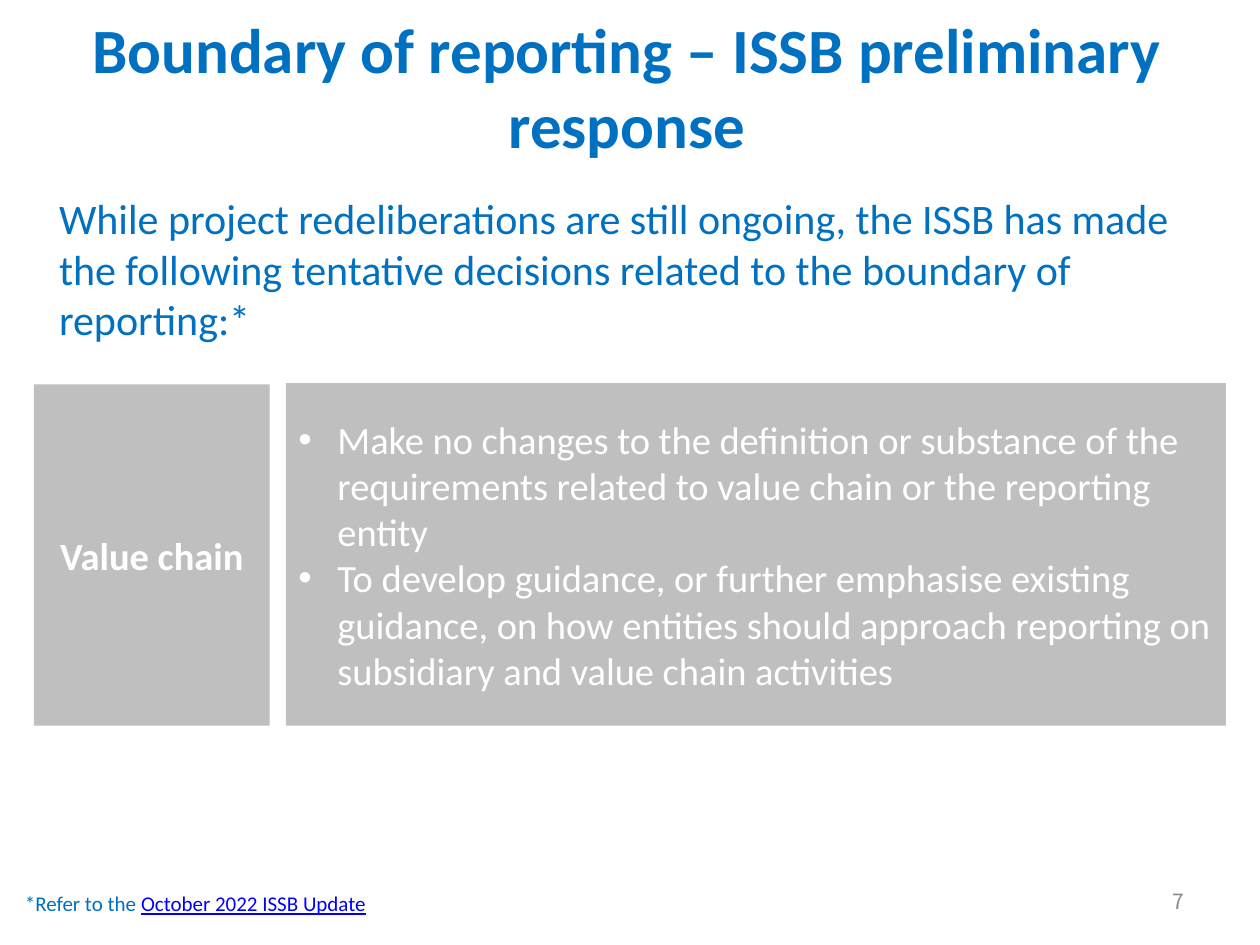
"""Build the slide on the boundary of reporting."""
from lxml import etree
from pptx import Presentation
from pptx.dml.color import RGBColor
from pptx.enum.shapes import MSO_SHAPE
from pptx.enum.text import MSO_ANCHOR, MSO_AUTO_SIZE, PP_ALIGN
from pptx.oxml.ns import qn
from pptx.util import Inches, Pt

BLUE = RGBColor(0x00, 0x70, 0xC0)
LINK_BLUE = RGBColor(0x00, 0x00, 0xFF)
GREY = RGBColor(0xBF, 0xBF, 0xBF)
NUMBER_GREY = RGBColor(0x89, 0x89, 0x89)
WHITE = RGBColor(0xFF, 0xFF, 0xFF)
RECTANGLE = MSO_SHAPE.RECTANGLE
TOP, MIDDLE = MSO_ANCHOR.TOP, MSO_ANCHOR.MIDDLE
LEFT, CENTER, RIGHT = PP_ALIGN.LEFT, PP_ALIGN.CENTER, PP_ALIGN.RIGHT
NO_AUTOFIT = MSO_AUTO_SIZE.NONE
TITLE_ONLY = 5

WIDTH, HEIGHT = 10, 7.5
MARGIN = 0.27
TEXT_LEFT = 0.1
PANEL_BOTTOM = 5.76
TOPIC = "Value chain"
DECISIONS = (
    "Make no changes to the definition or substance of the requirements "
    "related to value chain or the reporting entity",
    "To develop guidance, or further emphasise existing guidance, on how "
    "entities should approach reporting on subsidiary and value chain activities",
)


def add_run(paragraph, text, size, color, bold=False, underline=False, font="Calibri"):
    """Append one formatted run to a paragraph."""
    run = paragraph.add_run()
    run.text = text
    run.font.name = font
    run.font.size = Pt(size)
    run.font.bold = bold
    run.font.underline = underline
    run.font.color.rgb = color


def prepare_text(shape, anchor=TOP, align=LEFT):
    """Set wrapping, anchor and alignment, and return the first paragraph."""
    frame = shape.text_frame
    frame.word_wrap = True
    frame.auto_size = NO_AUTOFIT
    frame.vertical_anchor = anchor
    paragraph = frame.paragraphs[0]
    paragraph.alignment = align
    return paragraph


def set_indent(paragraph, left, first=0, bullet=None):
    """Indent a paragraph in inches and optionally give it a bullet."""
    properties = paragraph._p.get_or_add_pPr()
    properties.set("marL", str(Inches(left)))
    properties.set("indent", str(Inches(first)))
    if bullet:
        etree.SubElement(properties, qn("a:buFont")).set("typeface", "Arial")
        etree.SubElement(properties, qn("a:buChar")).set("char", bullet)


def add_title(slide, text):
    """Place and format the title placeholder."""
    title = slide.shapes.title
    title.left, title.top = Inches(TEXT_LEFT), Inches(0.33)
    title.width, title.height = Inches(9.75), Inches(0.7)
    add_run(prepare_text(title, MIDDLE, CENTER), text, 36, BLUE, bold=True)


def add_text(slide, left, top, width, height, anchor=TOP, align=LEFT):
    """Add a text box and return its first paragraph."""
    box = slide.shapes.add_textbox(*map(Inches, (left, top, width, height)))
    return prepare_text(box, anchor, align)


def add_panel(slide, left, top, width, align):
    """Add a grey panel down to the shared bottom edge."""
    bounds = (left, top, width, PANEL_BOTTOM - top)
    panel = slide.shapes.add_shape(RECTANGLE, *map(Inches, bounds))
    panel.shadow.inherit = False
    panel.fill.solid()
    panel.fill.fore_color.rgb = GREY
    panel.line.fill.background()
    prepare_text(panel, MIDDLE, align)
    return panel.text_frame


def add_decisions(frame):
    """Fill a panel with the bulleted decisions."""
    for index, decision in enumerate(DECISIONS):
        paragraph = frame.add_paragraph() if index else frame.paragraphs[0]
        paragraph.alignment = LEFT
        set_indent(paragraph, 0.31, -0.31, "•")
        add_run(paragraph, decision, 22, WHITE)


def main():
    """Assemble and save the slide."""
    presentation = Presentation()
    presentation.slide_width, presentation.slide_height = Inches(WIDTH), Inches(HEIGHT)
    slide = presentation.slides.add_slide(presentation.slide_layouts[TITLE_ONLY])
    add_title(slide, "Boundary of reporting – ISSB preliminary response")

    introduction = add_text(slide, MARGIN, 1.48, 9.32, 1.4)
    introduction.space_before, introduction.space_after = Pt(12), Pt(6)
    set_indent(introduction, 0.1)
    add_run(introduction, "While project redeliberations are still ongoing, the ISSB "
            "has made the following tentative decisions related to the boundary of "
            "reporting:*", 24, BLUE)

    number = add_text(slide, 7.17, 6.95, 2.33, 0.4, MIDDLE, RIGHT)
    add_run(number, "7", 12, NUMBER_GREY, font="Noto Sans CJK JP")

    topic = add_panel(slide, MARGIN, 3.05, 1.87, CENTER)
    add_run(topic.paragraphs[0], TOPIC, 22, WHITE, bold=True)
    add_decisions(add_panel(slide, 2.27, 3.04, WIDTH - MARGIN - 2.27, LEFT))

    footnote = add_text(slide, TEXT_LEFT, 7.02, 8.77, 0.48)
    add_run(footnote, "*Refer to the ", 12, BLUE)
    add_run(footnote, "October 2022 ISSB Update", 12, LINK_BLUE, underline=True)
    presentation.save("out.pptx")


if __name__ == "__main__":
    main()
